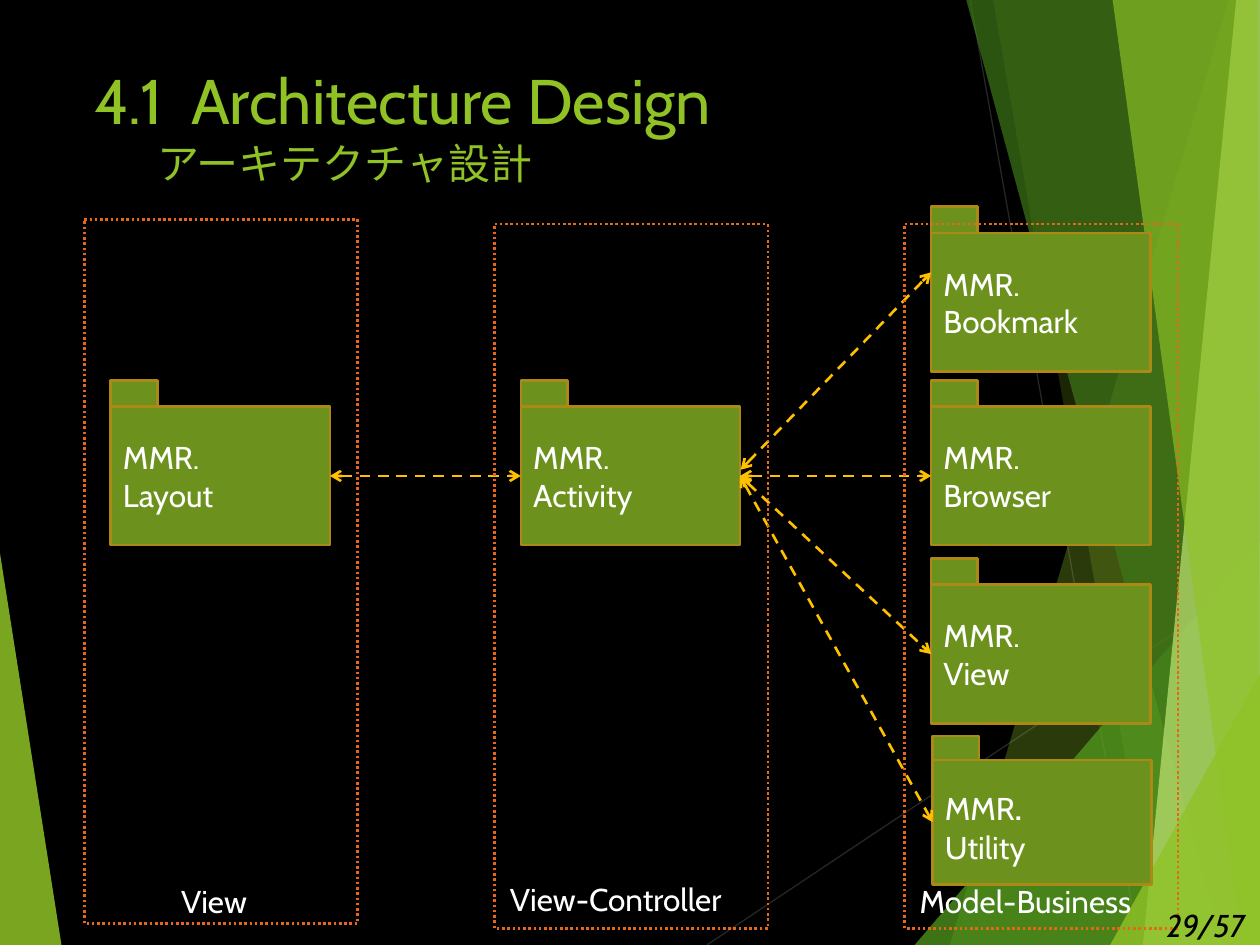
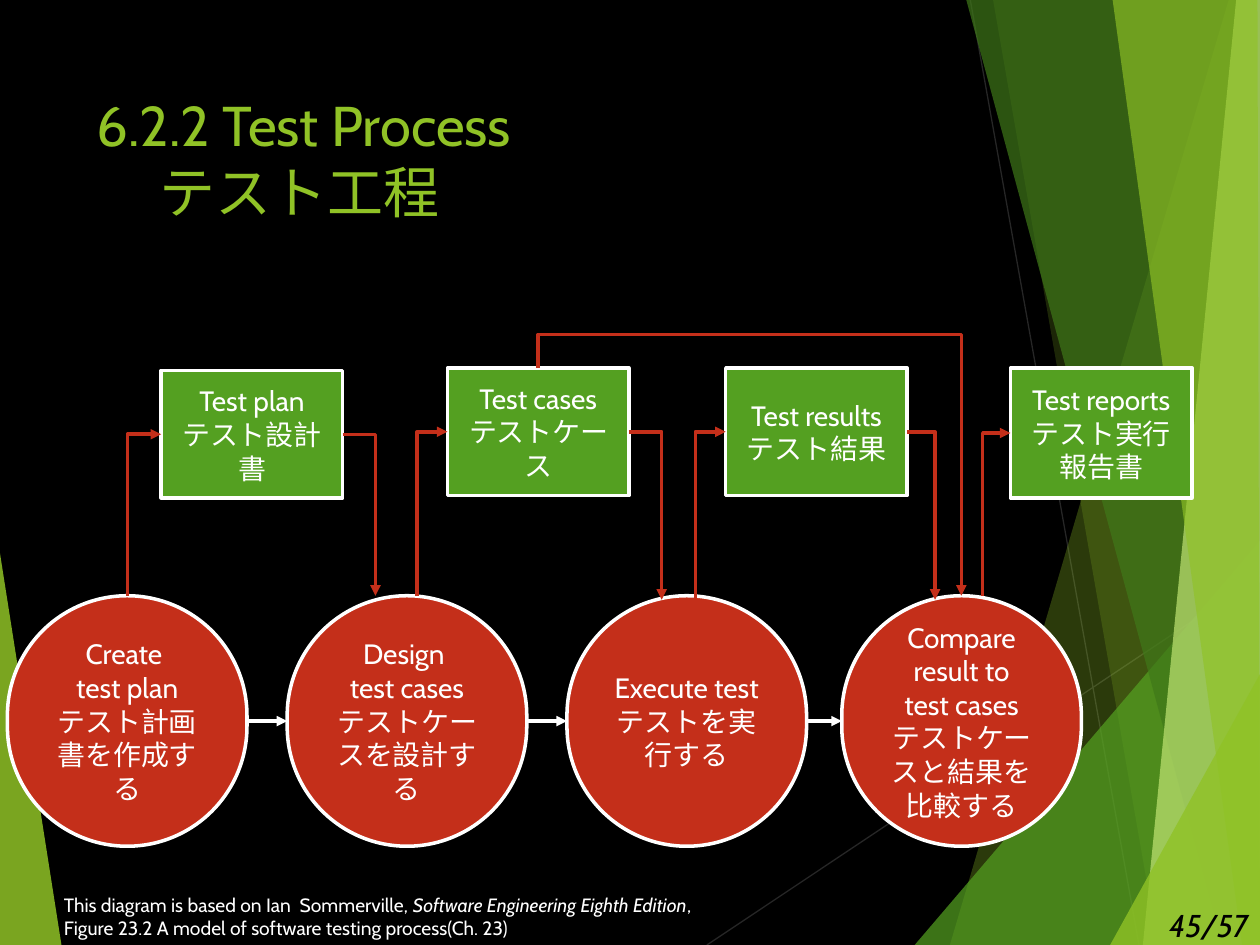
from dataclasses import dataclass

from lxml import etree
from pptx import Presentation
from pptx.dml.color import RGBColor
from pptx.enum import dml, shapes, text
from pptx.oxml import ns
from pptx.util import Cm, Pt


@dataclass(frozen=True)
class Theme:
    font: str = "Cabin"
    black: str = "000000"
    white: str = "FFFFFF"
    hairline: str = "262626"
    lime: str = "90C226"
    green: str = "54A021"
    forest: str = "3F7819"
    pale: str = "C0E474"
    folder: str = "6C921D"
    folder_edge: str = "AA8916"
    layer: str = "E76618"
    dependency: str = "FFC000"
    activity: str = "C42F1A"
    heading: int = 36
    section: int = 32
    large: int = 24
    body: int = 18
    process: int = 16
    note: int = 11


T = Theme()
WIDTH, HEIGHT = 25.4, 19.05

# Background facets: colour, opacity in percent, outline
FACETS = [
    (T.lime, 85, [(0, 11.15), (1.24, HEIGHT), (0, HEIGHT)]),
    (T.lime, 30, [(24.77, 0), (19.15, HEIGHT), (WIDTH, HEIGHT), (WIDTH, 0)]),
    (T.lime, 20, [(20.02, 0), (23.34, HEIGHT), (WIDTH, HEIGHT), (WIDTH, 0)]),
    (T.green, 72, [(18.44, HEIGHT), (WIDTH, 10.9), (WIDTH, HEIGHT)]),
    (T.forest, 70, [(19.48, 0), (24.64, HEIGHT), (WIDTH, HEIGHT), (WIDTH, 0)]),
    (T.pale, 70, [(24.92, 0), (23.04, HEIGHT), (WIDTH, HEIGHT), (WIDTH, 0)]),
    (T.lime, 65, [(22.43, 0), (25.04, HEIGHT), (WIDTH, HEIGHT), (25.35, 0)]),
    (T.lime, 80, [(22.38, HEIGHT), (WIDTH, 13.59), (WIDTH, HEIGHT)]),
]


def rgb(colour):
    return RGBColor.from_string(colour)


def add_xml(parent, tag, **attributes):
    return etree.SubElement(parent, ns.qn(tag), attributes)


# Text
def write(frame, lines, size, colour=T.white, align=text.PP_ALIGN.LEFT):
    """Each line is a string or a list of (text, size, italic) runs."""
    frame.word_wrap = True
    for number, line in enumerate(lines):
        paragraph = frame.paragraphs[0] if number == 0 else frame.add_paragraph()
        paragraph.alignment = align
        runs = [(line, size, False)] if isinstance(line, str) else line
        for words, run_size, italic in runs:
            run = paragraph.add_run()
            run.text = words
            run.font.name = T.font
            run.font.size = Pt(run_size)
            run.font.italic = italic
            run.font.color.rgb = rgb(colour)


def add_label(slide, x, y, w, h, lines, size, colour=T.white):
    label = slide.shapes.add_textbox(Cm(x), Cm(y), Cm(w), Cm(h))
    write(label.text_frame, lines, size, colour)
    return label


def add_title(slide, x, y, lines, size):
    title = add_label(slide, x, y, 17.63, 3.66, lines, size, T.lime)
    translation = title.text_frame.paragraphs[1]
    translation._p.get_or_add_pPr().set("marL", str(Cm(1.27)))


# Shapes
def add_block(slide, kind, x, y, w, h, fill, edge, weight):
    block = slide.shapes.add_shape(kind, Cm(x), Cm(y), Cm(w), Cm(h))
    block.shadow.inherit = False
    if fill:
        block.fill.solid()
        block.fill.fore_color.rgb = rgb(fill)
    else:
        block.fill.background()
    block.line.color.rgb = rgb(edge)
    block.line.width = Pt(weight)
    return block


def add_facet(slide, colour, opacity, outline):
    points = [(Cm(x), Cm(y)) for x, y in outline]
    builder = slide.shapes.build_freeform(*points[0])
    builder.add_line_segments(points[1:], close=True)
    facet = builder.convert_to_shape()
    facet.shadow.inherit = False
    facet.line.fill.background()
    facet.fill.solid()
    facet.fill.fore_color.rgb = rgb(colour)
    tint = facet.element.spPr.find(ns.qn("a:solidFill"))[0]
    add_xml(tint, "a:alpha", val=str(opacity * 1000))


# Connectors
def style_link(link, colour, weight, head=None, tail=None, dash=None):
    link.line.color.rgb = rgb(colour)
    link.line.width = Pt(weight)
    if dash:
        link.line.dash_style = dash
    properties = link.element.spPr
    outline = properties.find(ns.qn("a:ln"))
    for tag, arrow in (("a:headEnd", head), ("a:tailEnd", tail)):
        if arrow:
            add_xml(outline, tag, type=arrow)
    add_xml(properties, "a:effectLst")


def add_line(slide, start, end, colour, weight, **style):
    ends = [Cm(value) for value in (*start, *end)]
    link = slide.shapes.add_connector(shapes.MSO_CONNECTOR.STRAIGHT, *ends)
    style_link(link, colour, weight, **style)
    return link


def join(slide, source, target, colour, weight, **style):
    """Run from the right side of one block to the left side of another."""
    link = add_line(slide, (0, 0), (1, 1), colour, weight, **style)
    link.begin_connect(source, 3)
    link.end_connect(target, 1)


def add_elbow(slide, start, end, preset="bentConnector2", adjust=None, **turn):
    """A quarter turn in `turn` swaps the connector's width and height."""
    w, h = abs(end[0] - start[0]), abs(end[1] - start[1])
    middle_x, middle_y = (start[0] + end[0]) / 2, (start[1] + end[1]) / 2
    if "rot" in turn:
        w, h = h, w
    left, top = middle_x - w / 2, middle_y - h / 2
    link = slide.shapes.add_connector(
        shapes.MSO_CONNECTOR.ELBOW, Cm(left), Cm(top), Cm(left + w), Cm(top + h))
    for name, value in turn.items():
        link.element.spPr.xfrm.set(name, value)
    geometry = link.element.spPr.find(ns.qn("a:prstGeom"))
    geometry.set("prst", preset)
    if adjust is not None:
        add_xml(geometry.find(ns.qn("a:avLst")), "a:gd",
                name="adj1", fmla=f"val {adjust}")
    style_link(link, T.activity, 2, tail="triangle")


# Shared slide design
def new_slide(deck):
    slide = deck.slides.add_slide(deck.slide_layouts[6])
    slide.background.fill.solid()
    slide.background.fill.fore_color.rgb = rgb(T.black)
    add_line(slide, (14.25, HEIGHT), (WIDTH, 11.61), T.hairline, 0.75)
    add_line(slide, (19.56, 0), (22.96, HEIGHT), T.hairline, 0.75)
    for facet in FACETS:
        add_facet(slide, *facet)
    return slide


def add_page_number(slide, x, page):
    add_label(slide, x, 18.14, 2.21, 1.02, [[(f"{page}/57", T.body, True)]],
              T.body, T.black)


# Architecture slide
def add_folder(slide, x, y, lines, h=2.79, tab_h=0.53):
    kind = shapes.MSO_SHAPE.FLOWCHART_PROCESS
    look = (T.folder, T.folder_edge, 1.5)
    folder = add_block(slide, kind, x, y, 4.42, h, *look)
    folder.text_frame.vertical_anchor = text.MSO_ANCHOR.MIDDLE
    write(folder.text_frame, lines, T.body)
    add_block(slide, kind, x, y - tab_h, 0.94, tab_h, *look)
    return folder


def build_architecture(deck):
    slide = new_slide(deck)
    add_title(slide, 1.65, 1.12, [
        "4.1  Architecture Design",
        [("アーキテクチャ設計", T.large, False)]], T.heading)

    # Packages, one column per layer
    layer_x = [1.7 + 8.27 * column for column in range(3)]
    view_x, controller_x, model_x = [x + 0.53 for x in layer_x]
    middle_y = 8.2
    layout = add_folder(slide, view_x, middle_y, ["MMR.", "Layout"])
    activity = add_folder(slide, controller_x, middle_y, ["MMR.", "Activity"])
    add_folder(slide, model_x, 4.7, ["MMR.", "Bookmark"])
    browser = add_folder(slide, model_x, middle_y, ["MMR.", "Browser"])
    view = add_folder(slide, model_x, 11.79, ["MMR.", "View"])
    utility = add_folder(
        slide, model_x + 0.03, 15.32,
        [[("MMR", T.body, False), (".", T.large, False)], "Utility"], 2.51, 0.48)

    # Two-way dependencies
    style = dict(colour=T.dependency, weight=1.5, head="arrow", tail="arrow",
                 dash=dml.MSO_LINE.DASH)
    join(slide, layout, activity, **style)
    for model in (browser, view, utility):
        join(slide, activity, model, **style)
    add_line(slide, (14.93, 9.47), (model_x, 5.49), **style)

    # Layer frames and names
    for x, y in zip(layer_x, (4.42, 4.52, 4.52)):
        frame = add_block(slide, shapes.MSO_SHAPE.FLOWCHART_PROCESS,
                          x, y, 5.51, 14.2, None, T.layer, 1.5)
        frame.line.dash_style = dml.MSO_LINE.ROUND_DOT
    for x, y, w, name in [(3.4, 17.65, 1.98, "View"),
                          (10.03, 17.62, 5.03, "View-Controller"),
                          (18.29, 17.65, 4.93, "Model-Business")]:
        add_label(slide, x, y, w, 1.02, [name], T.body)
    add_page_number(slide, 23.27, 29)


# Test process slide
def add_step(slide, kind, x, y, w, h, fill, lines):
    step = add_block(slide, kind, x, y, w, h, fill, T.white, 2)
    step.text_frame.vertical_anchor = text.MSO_ANCHOR.MIDDLE
    write(step.text_frame, lines, T.process, align=text.PP_ALIGN.CENTER)
    return step


def build_test_process(deck):
    slide = new_slide(deck)
    add_title(slide, 1.7, 1.7, ["6.2.2 Test Process ", "テスト工程"], T.section)

    # Documents
    document_w = 3.66
    documents = [
        (3.25, 7.47, 2.57, ["Test plan", "テスト設計書"]),
        (9.02, 7.42, 2.57, ["Test cases", "テストケース"]),
        (14.63, 7.42, 2.57, ["Test results", "テスト結果"]),
        (20.37, 7.42, 2.62, ["Test reports", "テスト実行報告書"]),
    ]
    for x, y, h, lines in documents:
        add_step(slide, shapes.MSO_SHAPE.RECTANGLE, x, y, document_w, h,
                 T.green, lines)

    # Activities
    activity_y = 12.01
    activities = []
    for x, lines in [
        (0.15, ["Create ", "test plan", "テスト計画書を作成する"]),
        (5.79, ["Design ", "test cases", "テストケースを設計する"]),
        (11.43, ["Execute test", "テストを実行する"]),
        (16.97, ["Compare result to test cases", "テストケースと結果を比較する"]),
    ]:
        activity = add_step(slide, shapes.MSO_SHAPE.ROUNDED_RECTANGLE,
                            x, activity_y, 4.83, 5.05, T.activity, lines)
        activity.adjustments[0] = 0.5
        activities.append(activity)
    for source, target in zip(activities, activities[1:]):
        join(slide, source, target, T.white, 2, tail="triangle")

    # Activities produce documents, documents feed the next activity
    produce_from = [(2.57, 12.01), (8.41, 12.01), (14.02, 12.07), (19.81, 12.01)]
    feed_to = [(7.57, 12.01), (13.34, 12.09), (18.85, 12.09)]
    for start, (x, y, h, _) in zip(produce_from, documents):
        add_elbow(slide, start, (x, y + h / 2),
                  rot="5400000", flipH="1", flipV="1")
    for end, (x, y, h, _) in zip(feed_to, documents):
        add_elbow(slide, (x + document_w, y + h / 2), end)
    add_elbow(slide, (10.85, 7.42), (19.38, activity_y), "bentConnector3",
              -14800, rot="16200000", flipH="1")

    # Reference
    add_label(slide, 1.04, 17.88, 14.78, 1.63, [
        [("This diagram is based on Ian  Sommerville, ", T.note, False),
         ("Software Engineering Eighth Edition", T.note, True),
         (", ", T.note, False)],
        "Figure 23.2 A model of software testing process(Ch. 23)"], T.note)
    add_page_number(slide, 23.32, 45)


def main():
    deck = Presentation()
    deck.slide_width, deck.slide_height = Cm(WIDTH), Cm(HEIGHT)
    build_architecture(deck)
    build_test_process(deck)
    deck.save("out.pptx")


if __name__ == "__main__":
    main()
